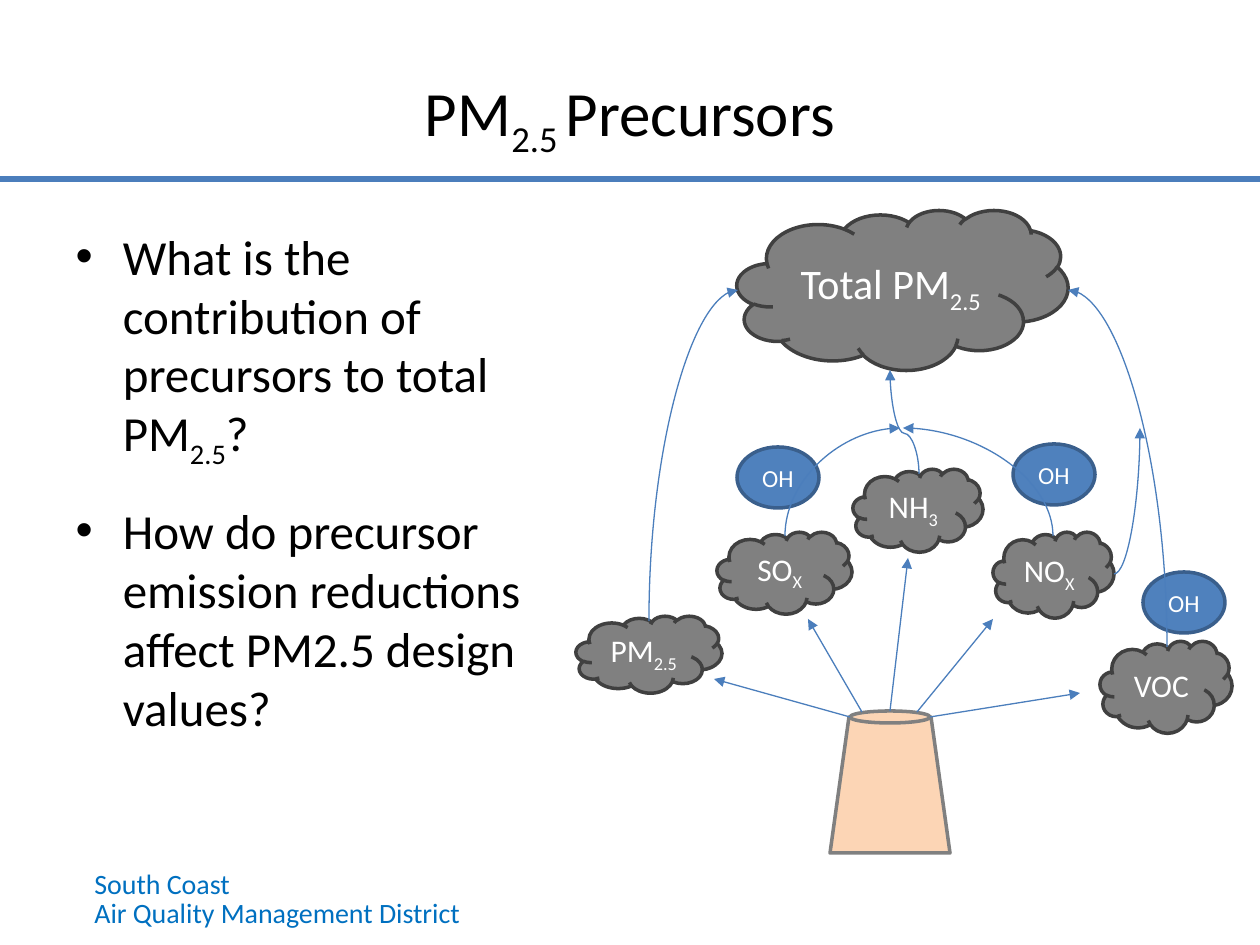
from typing import NamedTuple

from lxml.etree import SubElement
from pptx import Presentation
from pptx.dml.color import RGBColor
from pptx.enum.shapes import MSO_CONNECTOR, MSO_SHAPE
from pptx.enum.text import MSO_ANCHOR, MSO_AUTO_SIZE, PP_ALIGN
from pptx.oxml.ns import qn
from pptx.util import Inches, Pt

PX = Inches(1) / 126
FONT = "Calibri"
COLORS = {
    "text": "000000", "footer": "0070C0", "label": "FFFFFF", "arrow": "4B7EBC",
    "cloud": "808080", "cloud_edge": "404040",
    "radical": "4F81BD", "radical_edge": "3A5F8C",
    "stack": "FCD5B5", "stack_edge": "808080",
}


class Box(NamedTuple):
    left: int
    top: int
    width: int
    height: int


class Cloud(NamedTuple):
    label: str
    box: Box
    size: int = 18


class Curve(NamedTuple):
    start: tuple[int, int]
    end: tuple[int, int]
    kind: str = "curvedConnector2"
    rises_first: bool = True
    bend: int | None = None


CLOUDS = [
    Cloud("SO~X~", Box(717, 532, 135, 82)),
    Cloud("NO~X~", Box(993, 532, 121, 86)),
    Cloud("NH~3~", Box(853, 469, 130, 83)),
    Cloud("PM~2.5~", Box(576, 616, 146, 77)),
    Cloud("VOC", Box(1100, 641, 132, 92)),
    Cloud("Total PM~2.5~", Box(737, 210, 331, 160), 24),
]
EMISSION_ARROWS = [
    ((850, 717), (714, 679)),
    ((862, 712), (808, 619)),
    ((890, 711), (908, 558)),
    ((917, 712), (993, 619)),
    ((930, 717), (1080, 693)),
]
HYDROXYL_CORNERS = [(737, 447), (1013, 444), (1143, 572)]
REACTION_CURVES = [
    Curve((649, 621), (738, 290)),
    Curve((1053, 536), (903, 428)),
    Curve((785, 536), (900, 428)),
    Curve((1167, 647), (1068, 290)),
    Curve((919, 474), (890, 370), "curvedConnector3", bend=39000),
    Curve((1114, 574), (1140, 428), rises_first=False),
]


def emu(px: float) -> int:
    return round(px * PX)


def rgb(name: str) -> RGBColor:
    return RGBColor.from_string(COLORS[name])


def place(shape, box: Box) -> None:
    shape.left, shape.top, shape.width, shape.height = map(emu, box)


def write(paragraph, text: str, *, size: int, color: str, align=None,
          line_spacing=None, before=None, after=None) -> None:
    """Fill a paragraph; parts between ~ marks become subscripts."""
    if align is not None:
        paragraph.alignment = align
    if line_spacing is not None:
        paragraph.line_spacing = line_spacing
    if before is not None:
        paragraph.space_before = Pt(before)
    if after is not None:
        paragraph.space_after = Pt(after)
    for index, part in enumerate(text.split("~")):
        if not part:
            continue
        run = paragraph.add_run()
        run.text = part
        run.font.name = FONT
        run.font.size = Pt(size)
        run.font.color.rgb = rgb(color)
        if index % 2:
            run.font._element.set("baseline", "-25000")


def add_outlined(slide, preset: MSO_SHAPE, box: Box, color: str, label: str = "",
                 size: int = 18):
    shape = slide.shapes.add_shape(preset, *map(emu, box))
    shape.shadow.inherit = False
    shape.fill.solid()
    shape.fill.fore_color.rgb = rgb(color)
    shape.line.color.rgb = rgb(f"{color}_edge")
    shape.line.width = Pt(2)
    if label:
        frame = shape.text_frame
        frame.margin_left = frame.margin_right = 0
        frame.vertical_anchor = MSO_ANCHOR.MIDDLE
        write(frame.paragraphs[0], label, size=size, color="label", align=PP_ALIGN.CENTER)
    return shape


def add_line(slide, start: tuple[int, int], end: tuple[int, int], *,
             kind=MSO_CONNECTOR.STRAIGHT, width: float = 0.75, arrow: bool = True):
    line = slide.shapes.add_connector(kind, *map(emu, (*start, *end)))
    line.line.color.rgb = rgb("arrow")
    line.line.width = Pt(width)
    if arrow:
        SubElement(line.line._get_or_add_ln(), qn("a:tailEnd"), type="triangle")
    SubElement(line._element.spPr, qn("a:effectLst"))
    return line


def add_curve(slide, curve: Curve) -> None:
    """Draw a rising curve; one that rises first is a preset turned by 270 degrees."""
    (x0, y0), (x1, y1) = curve.start, curve.end
    connector = add_line(slide, curve.start, curve.end, kind=MSO_CONNECTOR.CURVE)
    properties = connector._element.spPr
    frame = properties.find(qn("a:xfrm"))
    for name in ("rot", "flipH", "flipV"):
        frame.attrib.pop(name, None)
    width, height = abs(x1 - x0), abs(y1 - y0)
    if curve.rises_first:
        width, height = height, width
        frame.set("rot", str(270 * 60000))
    if x1 < x0 or not curve.rises_first:
        frame.set("flipV", "1")
    place(connector, Box((x0 + x1 - width) / 2, (y0 + y1 - height) / 2, width, height))
    geometry = properties.find(qn("a:prstGeom"))
    geometry.set("prst", curve.kind)
    if curve.bend is not None:
        guides = geometry.find(qn("a:avLst"))
        SubElement(guides, qn("a:gd"), name="adj1", fmla=f"val {curve.bend}")


def add_texts(slide) -> None:
    title = slide.shapes.title
    place(title, Box(63, 38, 1134, 157))
    title.text_frame.vertical_anchor = MSO_ANCHOR.MIDDLE
    write(title.text_frame.paragraphs[0], "PM~2.5 ~Precursors", size=36, color="text",
          align=PP_ALIGN.CENTER)

    questions = slide.placeholders[1]
    place(questions, Box(63, 220, 557, 624))
    body = questions.text_frame
    body.auto_size = MSO_AUTO_SIZE.NONE
    write(body.paragraphs[0], "What is the contribution of precursors to total PM~2.5~?",
          size=28, color="text", before=0, after=12)
    write(body.add_paragraph(),
          "How do precursor emission reductions affect PM2.5 design values?",
          size=28, color="text")

    agency = slide.shapes.add_textbox(*map(emu, Box(82, 866, 472, 70))).text_frame
    agency.word_wrap = True
    write(agency.paragraphs[0], "South Coast", size=16, color="footer", line_spacing=0.85)
    write(agency.add_paragraph(), "Air Quality Management District", size=16,
          color="footer", line_spacing=0.85)


def add_diagram(slide) -> None:
    chimney = add_outlined(slide, MSO_SHAPE.TRAPEZOID, Box(830, 717, 120, 136), "stack")
    chimney.adjustments[0] = 0.158
    rim = add_outlined(slide, MSO_SHAPE.OVAL, Box(850, 711, 80, 12), "stack")
    for cloud in CLOUDS:
        add_outlined(slide, MSO_SHAPE.CLOUD, cloud.box, "cloud", cloud.label, cloud.size)
    for start, end in EMISSION_ARROWS:
        arrow = add_line(slide, start, end)
        if start == (890, 711):
            arrow.begin_connect(rim, 0)
    add_curve(slide, REACTION_CURVES[0])
    for left, top in HYDROXYL_CORNERS:
        add_outlined(slide, MSO_SHAPE.OVAL, Box(left, top, 82, 61), "radical", "OH", 14)
    for curve in REACTION_CURVES[1:]:
        add_curve(slide, curve)


def main() -> None:
    deck = Presentation()
    deck.slide_width, deck.slide_height = emu(1260), emu(945)
    slide = deck.slides.add_slide(deck.slide_layouts[1])
    add_line(slide, (0, 179), (1260, 179), width=3.5, arrow=False)
    add_texts(slide)
    add_diagram(slide)
    deck.save("out.pptx")


if __name__ == "__main__":
    main()
